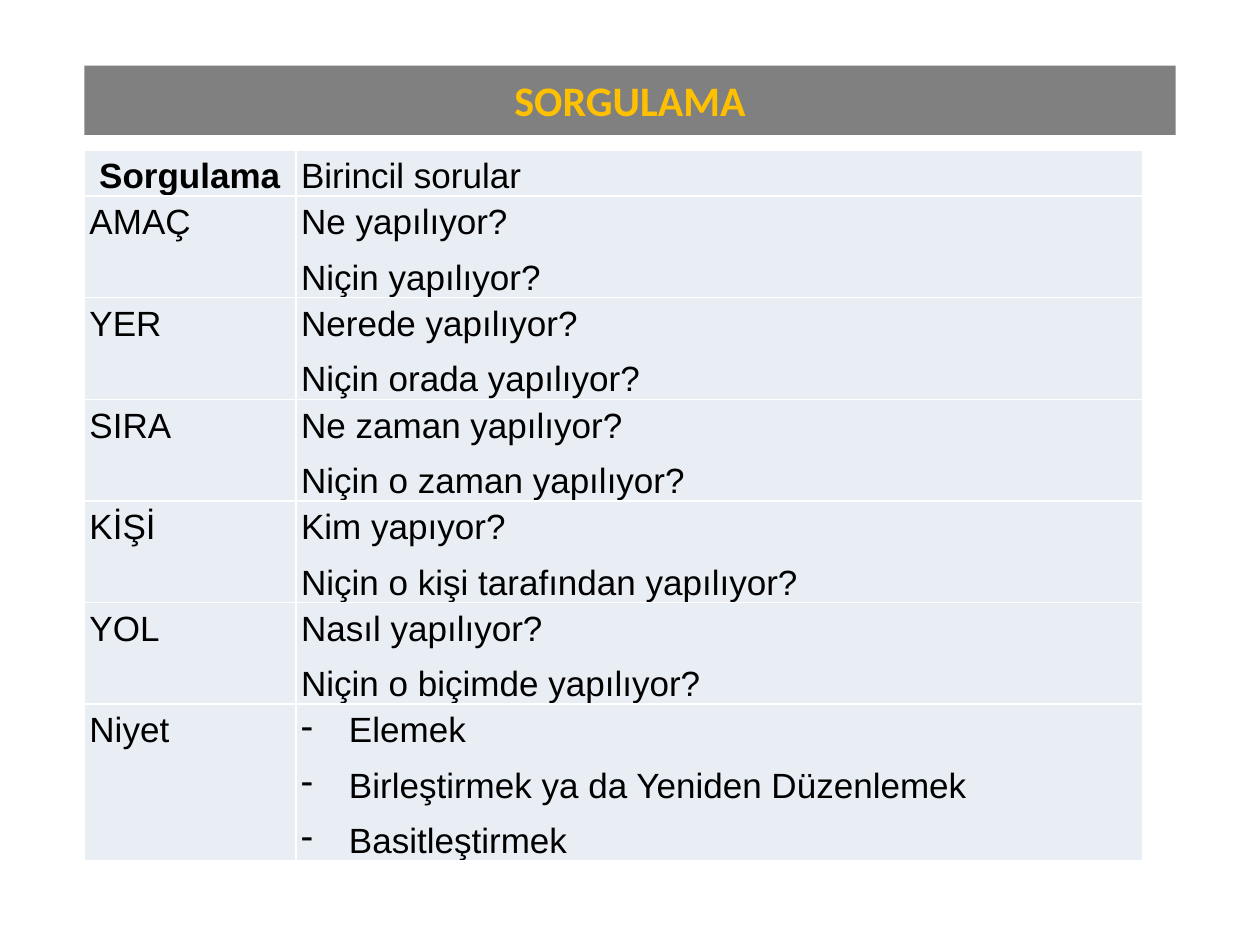
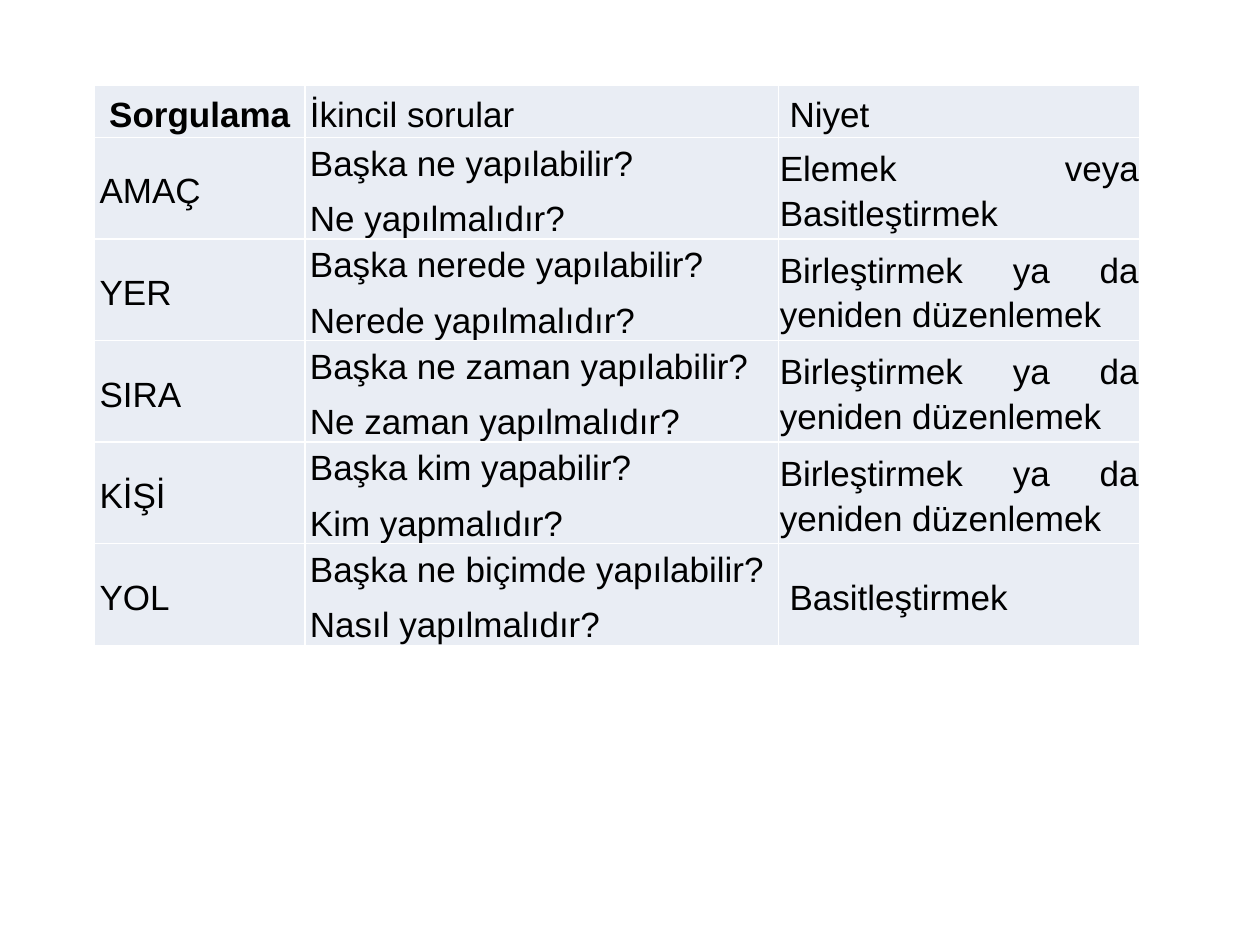
import pptx
import pptx.dml.color
import pptx.enum.text
import pptx.util
from lxml import etree

COLORS = {"band": "808080", "title": "FFC000", "cell": "E9EDF4", "text": "000000"}
ALIGN = pptx.enum.text.PP_ALIGN
ANCHOR = pptx.enum.text.MSO_ANCHOR
inches = pptx.util.Inches
MAIN = "{http://schemas.openxmlformats.org/drawingml/2006/main}"

SLIDE_SIZE = (10, 7.5)
BULLET_INDENT = 0.38
WIDE_MARGIN, NARROW_MARGIN = 0.04, 0.01
TITLE_LAYOUT, BLANK_LAYOUT = 5, 6
REARRANGE = "Birleştirmek ya da yeniden düzenlemek"

SLIDES = [
    {
        "title": "SORGULAMA",
        "position": (0.67, 1.19),
        "columns": [1.68, 6.72],
        "heights": [0.3] + [0.69] * 5 + [1.08],
        "margins": [WIDE_MARGIN, WIDE_MARGIN],
        "anchor": ANCHOR.TOP,
        "bulleted_row": "Niyet",
        "rows": [
            (" Sorgulama", "Birincil sorular"),
            ("AMAÇ", "Ne yapılıyor?\nNiçin yapılıyor?"),
            ("YER", "Nerede yapılıyor?\nNiçin orada yapılıyor?"),
            ("SIRA", "Ne zaman yapılıyor?\nNiçin o zaman yapılıyor?"),
            ("KİŞİ", "Kim yapıyor?\nNiçin o kişi tarafından yapılıyor?"),
            ("YOL", "Nasıl yapılıyor?\nNiçin o biçimde yapılıyor?"),
            ("Niyet", "Elemek\nBirleştirmek ya da Yeniden Düzenlemek\nBasitleştirmek"),
        ],
    },
    {
        "title": None,
        "position": (0.75, 0.68),
        "columns": [1.67, 3.76, 2.87],
        "heights": [0.41] + [0.65] * 4 + [0.37],
        "margins": [WIDE_MARGIN, WIDE_MARGIN, NARROW_MARGIN],
        "anchor": ANCHOR.MIDDLE,
        "bulleted_row": None,
        "rows": [
            (" Sorgulama", "İkincil sorular", " Niyet"),
            ("AMAÇ", "Başka ne yapılabilir?\nNe yapılmalıdır?", "Elemek veya Basitleştirmek"),
            ("YER", "Başka nerede yapılabilir?\nNerede yapılmalıdır?", REARRANGE),
            ("SIRA", "Başka ne zaman yapılabilir?\nNe zaman yapılmalıdır?", REARRANGE),
            ("KİŞİ", "Başka kim yapabilir?\nKim yapmalıdır?", REARRANGE),
            ("YOL", "Başka ne biçimde yapılabilir?\nNasıl yapılmalıdır?", " Basitleştirmek"),
        ],
    },
]


def paint(fill, color):
    fill.solid()
    fill.fore_color.rgb = pptx.dml.color.RGBColor.from_string(COLORS[color])


def write_text(frame, text, *, size=20, font="Arial", color="text", bold=False,
               align=ALIGN.JUSTIFY, line_spacing=1.15, space_after=6, bullet=None):
    for index, line in enumerate(text.split("\n")):
        paragraph = frame.add_paragraph() if index else frame.paragraphs[0]
        paragraph.alignment = align
        paragraph.line_spacing = line_spacing
        paragraph.space_after = pptx.util.Pt(space_after)
        run = paragraph.add_run()
        run.text = line
        run.font.size = pptx.util.Pt(size)
        run.font.name = font
        run.font.bold = bold
        run.font.color.rgb = pptx.dml.color.RGBColor.from_string(COLORS[color])
        if bullet:
            properties = paragraph._p.get_or_add_pPr()
            indent = inches(BULLET_INDENT)
            properties.set("marL", str(indent))
            properties.set("indent", str(-indent))
            etree.SubElement(properties, MAIN + "buChar").set("char", bullet)


def add_title(slide, text):
    title = slide.shapes.title
    title.left, title.top = inches(0.67), inches(0.52)
    title.width, title.height = inches(8.66), inches(0.55)
    paint(title.fill, "band")
    title.text_frame.vertical_anchor = ANCHOR.MIDDLE
    write_text(title.text_frame, text, size=24, font="Calibri", color="title", bold=True,
               align=ALIGN.CENTER, line_spacing=1.0, space_after=0)


def add_question_table(slide, content):
    rows, columns, heights = content["rows"], content["columns"], content["heights"]
    left, top = content["position"]
    table = slide.shapes.add_table(
        len(rows), len(columns), inches(left), inches(top),
        inches(sum(columns)), inches(sum(heights))).table
    table.first_row = False
    table.horz_banding = False
    for column, width in zip(table.columns, columns):
        column.width = inches(width)
    for row_index, (row, height) in enumerate(zip(rows, heights)):
        table.rows[row_index].height = inches(height)
        for column_index, text in enumerate(row):
            cell = table.cell(row_index, column_index)
            cell.margin_left = cell.margin_right = inches(content["margins"][column_index])
            cell.margin_top, cell.margin_bottom = inches(0.01), 0
            cell.vertical_anchor = content["anchor"]
            paint(cell.fill, "cell")
            bulleted = row[0] == content["bulleted_row"] and column_index > 0
            write_text(cell.text_frame, text, bold=row_index == column_index == 0,
                       bullet="-" if bulleted else None)


def main():
    presentation = pptx.Presentation()
    presentation.slide_width, presentation.slide_height = map(inches, SLIDE_SIZE)
    for content in SLIDES:
        layout = TITLE_LAYOUT if content["title"] else BLANK_LAYOUT
        slide = presentation.slides.add_slide(presentation.slide_layouts[layout])
        add_question_table(slide, content)
        if content["title"]:
            add_title(slide, content["title"])
    presentation.save("out.pptx")


if __name__ == "__main__":
    main()
